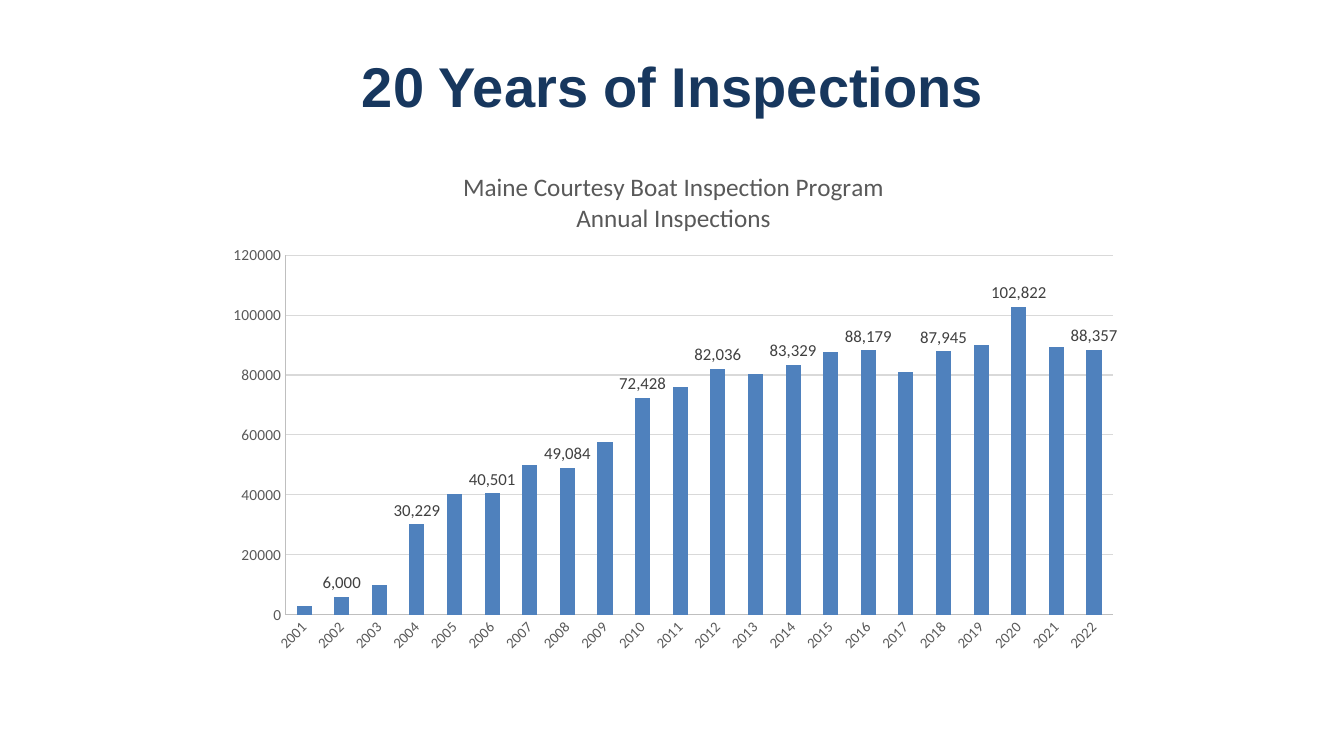
"""Build a slide with a column chart of yearly boat inspections in Maine."""
from lxml import etree
from pptx import Presentation
from pptx import util as u
from pptx.chart.data import CategoryChartData
from pptx.dml.color import RGBColor
from pptx.enum import chart as ch, text
from pptx.oxml.ns import qn

HEADING = "20 Years of Inspections"
CHART_TITLE = ["Maine Courtesy Boat Inspection Program", "Annual Inspections"]
FIRST_YEAR = 2001
INSPECTIONS = [2848, 6000, 10000, 30229, 40430, 40501, 49865, 49084, 57552, 72428, 76123,
               82036, 80278, 83329, 87572, 88179, 81080, 87945, 89860, 102822, 89425, 88357]
TITLE_PLACE = {"x": 0.27, "y": 0.04}
PLOT_PLACE = {"x": 0.08, "y": 0.21, "w": 0.9, "h": 0.7}

NAVY = RGBColor(0x17, 0x37, 0x5E)
BLUE = RGBColor(0x4F, 0x81, 0xBD)
DARK = RGBColor(0x40, 0x40, 0x40)
GREY = RGBColor(0x59, 0x59, 0x59)
AXIS = RGBColor(0xBF, 0xBF, 0xBF)
GRID = RGBColor(0xD9, 0xD9, 0xD9)


def style(font, size, color, name="Calibri", bold=False):
    font.size, font.name, font.bold = u.Pt(size), name, bold
    font.color.rgb = color


def write(frame, lines, **look):
    for index, line in enumerate(lines):
        paragraph = frame.add_paragraph() if index else frame.paragraphs[0]
        paragraph.text = line
        paragraph.alignment = text.PP_ALIGN.CENTER
        style(paragraph.runs[0].font, **look)


def draw_line(line, color):
    line.color.rgb = color
    line.width = u.Pt(0.75)


def place(part, numbers, inner=False):
    for old in part.findall(qn("c:layout")):
        part.remove(old)
    layout = etree.Element(qn("c:layout"))
    manual = etree.SubElement(layout, qn("c:manualLayout"))
    if inner:
        etree.SubElement(manual, qn("c:layoutTarget")).set("val", "inner")
    for side in ("x", "y"):
        etree.SubElement(manual, qn(f"c:{side}Mode")).set("val", "edge")
    for side, share in numbers.items():
        etree.SubElement(manual, qn(f"c:{side}")).set("val", str(share))
    part.insert(0 if inner else 1, layout)


def add_inspections_chart(slide):
    data = CategoryChartData()
    data.categories = [str(FIRST_YEAR + i) for i in range(len(INSPECTIONS))]
    data.add_series("Series 1", INSPECTIONS)
    chart = slide.shapes.add_chart(ch.XL_CHART_TYPE.COLUMN_CLUSTERED, u.Inches(2.1),
                                   u.Inches(1.46), u.Inches(9.12), u.Inches(5.1), data).chart
    style(chart.font, 10, DARK)
    chart.has_legend = False
    chart.has_title = True
    write(chart.chart_title.text_frame, CHART_TITLE, size=18, color=GREY)
    chart.chart_title.include_in_layout = False

    years, counts = chart.category_axis, chart.value_axis
    for axis, size in ((years, 10.5), (counts, 11)):
        axis.major_tick_mark = axis.minor_tick_mark = ch.XL_TICK_MARK.NONE
        style(axis.tick_labels.font, size, GREY)
        draw_line(axis.format.line, AXIS)
    years.has_major_gridlines = False
    years._element.find(qn("c:txPr")).find(qn("a:bodyPr")).set("rot", "-2700000")
    counts.minimum_scale, counts.maximum_scale, counts.major_unit = 0, 120000, 20000
    counts.tick_labels.number_format = "0"
    counts.tick_labels.number_format_is_linked = False
    draw_line(counts.major_gridlines.format.line, GRID)

    plot = chart.plots[0]
    plot.gap_width = 150
    plot.vary_by_categories = False
    bars = plot.series[0]
    bars.format.fill.solid()
    bars.format.fill.fore_color.rgb = BLUE
    labels = bars.data_labels
    labels.show_value = True
    labels.number_format = "#,##0"
    labels.number_format_is_linked = False
    labels.position = ch.XL_LABEL_POSITION.OUTSIDE_END
    style(labels.font, 12, DARK)
    for order, bar in enumerate(range(0, len(INSPECTIONS), 2)):
        hidden = etree.Element(qn("c:dLbl"))
        etree.SubElement(hidden, qn("c:idx")).set("val", str(bar))
        etree.SubElement(hidden, qn("c:delete")).set("val", "1")
        labels._element.insert(order, hidden)

    place(chart.chart_title._element, TITLE_PLACE)
    place(plot._element.getparent(), PLOT_PLACE, inner=True)


def main():
    deck = Presentation()
    deck.slide_width, deck.slide_height = u.Inches(13.33), u.Inches(7.5)
    slide = deck.slides.add_slide(deck.slide_layouts[6])
    heading = slide.shapes.add_textbox(u.Inches(0.92), u.Inches(0.4),
                                       u.Inches(11.5), u.Inches(0.88)).text_frame
    heading.word_wrap = True
    heading.vertical_anchor = text.MSO_ANCHOR.MIDDLE
    write(heading, [HEADING], size=40, color=NAVY, name="Arial", bold=True)
    add_inspections_chart(slide)
    deck.save("out.pptx")


if __name__ == "__main__":
    main()
